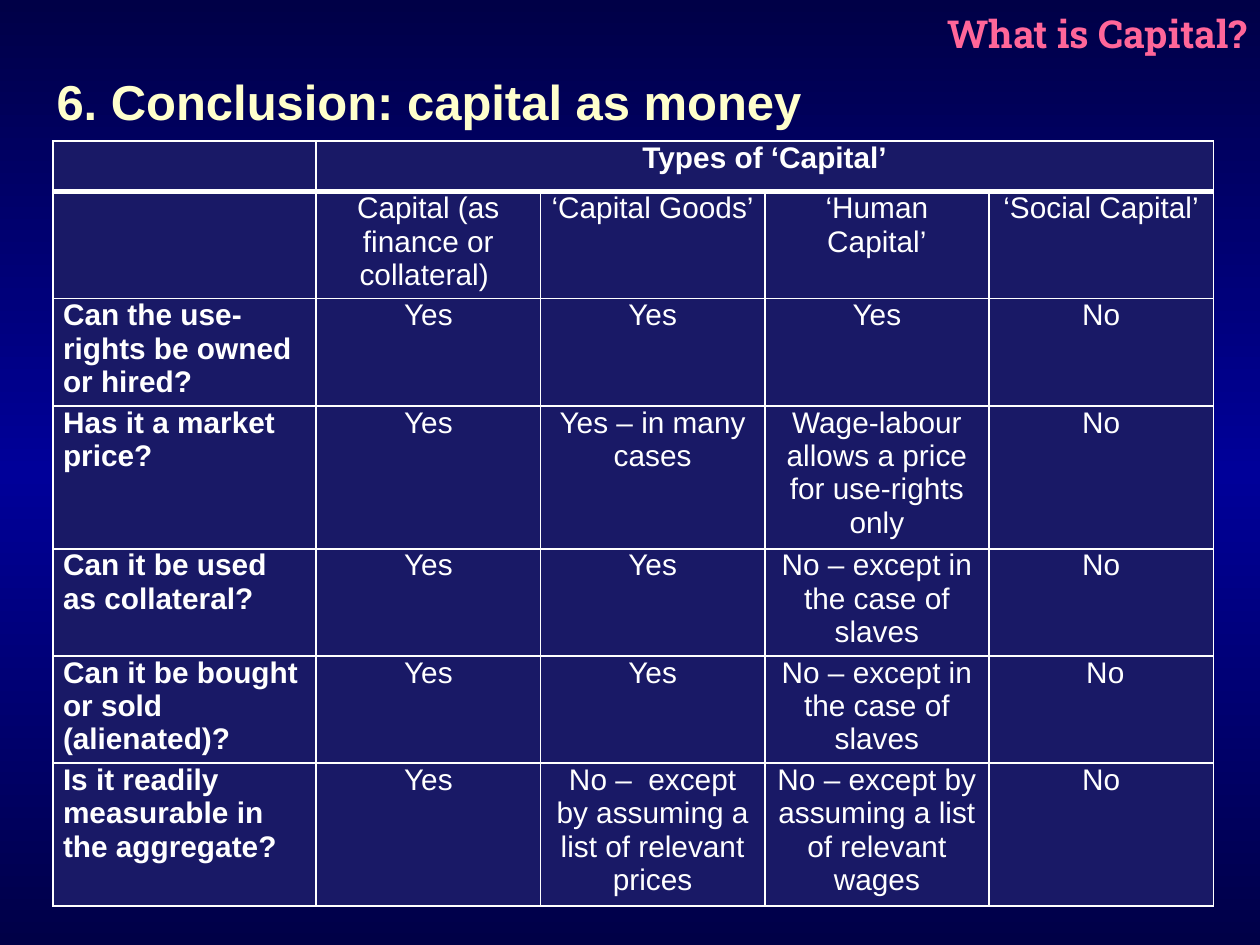
from copy import deepcopy

from lxml import etree
from pptx import Presentation
from pptx.dml.color import RGBColor
from pptx.enum.text import MSO_ANCHOR, PP_ALIGN
from pptx.oxml.ns import qn
from pptx.util import Inches, Pt

LEFT, CENTER, RIGHT = PP_ALIGN.LEFT, PP_ALIGN.CENTER, PP_ALIGN.RIGHT
MIDDLE = MSO_ANCHOR.MIDDLE

NAVY = RGBColor(0x00, 0x00, 0x47)
BLUE = RGBColor(0x00, 0x00, 0x99)
INDIGO = RGBColor(0x19, 0x19, 0x66)
PINK = RGBColor(0xFF, 0x66, 0x99)
CREAM = RGBColor(0xFF, 0xFF, 0xCC)
WHITE = RGBColor(0xFF, 0xFF, 0xFF)

TITLE = "What is Capital?"
HEADING = "6. Conclusion: capital as money"
ROWS = [
    ["", "Types of ‘Capital’", "", "", ""],
    ["", "Capital (as finance or collateral) ", "‘Capital Goods’",
     "‘Human Capital’", "‘Social Capital’"],
    ["Can the use-rights be owned or hired?", "Yes", "Yes", "Yes", "No"],
    ["Has it a market price?", "Yes", "Yes – in many cases",
     "Wage-labour allows a price for use-rights only", "No"],
    ["Can it be used as collateral?", "Yes", "Yes",
     "No – except in the case of slaves", "No"],
    ["Can it be bought or sold (alienated)?", "Yes", "Yes",
     "No – except in the case of slaves", " No"],
    ["Is it readily measurable in the aggregate?", "Yes",
     "No –  except by assuming a list of relevant prices",
     "No – except by assuming a list of relevant wages", "No"],
]
COLUMN_WIDTHS = [2.09] + [1.78] * 4
ROW_HEIGHTS = [0.4, 0.85, 0.85, 1.13, 0.85, 0.85, 1.13]
THIN, THICK = 1, 3


def add_span(para, text, size, font, color, bold=False):
    span = para.add_run()
    span.text = text
    span.font.size = Pt(size)
    span.font.name = font
    span.font.bold = bold
    span.font.color.rgb = color


def paint_background(page):
    fill = page.background.fill
    fill.gradient()
    fill.gradient_angle = 90
    stops = page.background._cSld.find(".//" + qn("a:gsLst"))
    stops.insert(1, deepcopy(stops[0]))
    for stop, position, color in zip(fill.gradient_stops, (0, 0.5, 1), (NAVY, BLUE, NAVY)):
        stop.color.rgb = color
        stop.position = position


def add_border(cell, side, width):
    line = etree.SubElement(cell._tc.get_or_add_tcPr(), qn("a:ln" + side), w=str(Pt(width)))
    solid = etree.SubElement(line, qn("a:solidFill"))
    etree.SubElement(solid, qn("a:srgbClr"), val=str(WHITE))


def format_cell(cell, text, row, column):
    cell.margin_left = cell.margin_right = Inches(0.08)
    cell.margin_top = cell.margin_bottom = 0
    for side in "LRTB":
        under_header = (row, side) in ((0, "B"), (1, "T"))
        add_border(cell, side, THICK if under_header else THIN)
    cell.fill.solid()
    cell.fill.fore_color.rgb = INDIGO
    if text:
        para = cell.text_frame.paragraphs[0]
        para.alignment = CENTER if column else LEFT
        para.space_before = para.space_after = Pt(6)
        add_span(para, text, 17, "Arial", WHITE, row == 0 or column == 0)


def add_comparison(page):
    frame = page.shapes.add_table(
        len(ROWS), len(COLUMN_WIDTHS), Inches(0.42), Inches(1.12),
        Inches(sum(COLUMN_WIDTHS)), Inches(sum(ROW_HEIGHTS)))
    table = frame.table
    table.first_row = table.horz_banding = False
    for column, width in zip(table.columns, COLUMN_WIDTHS):
        column.width = Inches(width)
    for row, height in zip(table.rows, ROW_HEIGHTS):
        row.height = Inches(height)
    table.cell(0, 1).merge(table.cell(0, 4))
    for row, texts in enumerate(ROWS):
        for column, text in enumerate(texts):
            format_cell(table.cell(row, column), text, row, column)


def main():
    deck = Presentation()
    deck.slide_width, deck.slide_height = Inches(10), Inches(7.5)
    page = deck.slides.add_slide(deck.slide_layouts[5])
    paint_background(page)

    title = page.shapes.title
    title.left, title.top = Inches(6.02), Inches(0)
    title.width, title.height = Inches(3.98), Inches(0.52)
    title.text_frame.vertical_anchor = MIDDLE
    para = title.text_frame.paragraphs[0]
    para.alignment = RIGHT
    add_span(para, TITLE, 22, "Roboto Slab", PINK, True)

    heading = page.shapes.add_textbox(Inches(0.35), Inches(0.52), Inches(7.09), Inches(0.57))
    heading.text_frame.word_wrap = True
    add_span(heading.text_frame.paragraphs[0], HEADING, 28, "Arial", CREAM, True)

    add_comparison(page)
    deck.save("out.pptx")


if __name__ == "__main__":
    main()
